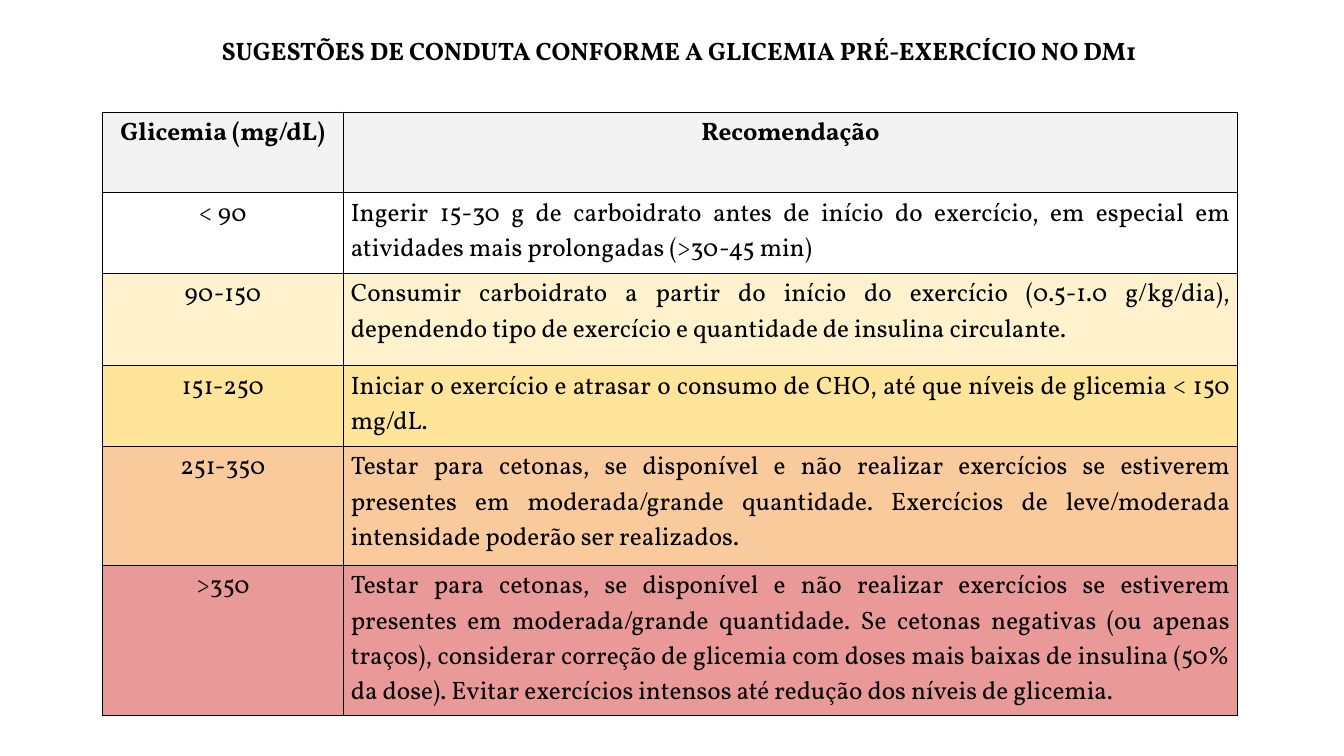
from lxml.etree import SubElement
from pptx import Presentation
from pptx.dml.color import RGBColor
from pptx.enum.text import MSO_ANCHOR, MSO_AUTO_SIZE, PP_ALIGN
from pptx.oxml.ns import qn
from pptx.util import Inches, Pt

BLACK = RGBColor(0x00, 0x00, 0x00)
GREY = RGBColor(0xF3, 0xF3, 0xF3)
WHITE = RGBColor(0xFF, 0xFF, 0xFF)
CREAM = RGBColor(0xFF, 0xF2, 0xCC)
YELLOW = RGBColor(0xFF, 0xE5, 0x99)
ORANGE = RGBColor(0xF9, 0xCB, 0x9C)
RED = RGBColor(0xEA, 0x99, 0x99)

FONT = {"name": "Vollkorn", "size": Pt(18), "bold": False}
BOLD = {**FONT, "bold": True}
CELL = {"margin_left": Inches(0.07), "margin_right": Inches(0.07),
        "margin_top": Inches(0.05), "margin_bottom": Inches(0.05),
        "vertical_anchor": MSO_ANCHOR.TOP}
FRAME = {"word_wrap": True, "auto_size": MSO_AUTO_SIZE.NONE,
         "vertical_anchor": MSO_ANCHOR.MIDDLE}

TITLE = "SUGESTÕES DE CONDUTA CONFORME A GLICEMIA PRÉ-EXERCÍCIO NO DM1"
KETONES = ("Testar para cetonas, se disponível e não realizar exercícios se "
           "estiverem presentes em moderada/grande quantidade. ")
COLS = [2.4, 8.86]
# Row height, fill, blood glucose range, advice
ROWS = [
    (0.8, GREY, "Glicemia (mg/dL)", "Recomendação"),
    (0.79, WHITE, "< 90",
     "Ingerir 15-30 g de carboidrato antes de início do exercício, em "
     "especial em atividades mais prolongadas (>30-45 min)"),
    (0.92, CREAM, "90-150",
     "Consumir carboidrato a partir do início do exercício (0.5-1.0 "
     "g/kg/dia), dependendo tipo de exercício e quantidade de insulina "
     "circulante."),
    (0.79, YELLOW, "151-250",
     "Iniciar o exercício e atrasar o consumo de CHO, até que níveis de "
     "glicemia < 150 mg/dL."),
    (1.18, ORANGE, "251-350",
     KETONES + "Exercícios de leve/moderada intensidade poderão ser "
     "realizados."),
    (1.49, RED, ">350",
     KETONES + "Se cetonas negativas (ou apenas traços), considerar correção "
     "de glicemia com doses mais baixas de insulina (50% da dose). Evitar "
     "exercícios intensos até redução dos níveis de glicemia."),
]


def apply(item, style):
    for key, value in style.items():
        setattr(item, key, value)


def write(frame, text, style, align):
    para = frame.paragraphs[0]
    para.text = text
    para.alignment = align
    font = para.runs[0].font
    apply(font, style)
    font.color.rgb = BLACK


def border(cell):
    props = cell._tc.get_or_add_tcPr()
    for side in ("a:lnL", "a:lnR", "a:lnT", "a:lnB"):
        line = SubElement(props, qn(side), w=str(Pt(0.5)))
        fill = SubElement(line, qn("a:solidFill"))
        SubElement(fill, qn("a:srgbClr"), val=str(BLACK))


def place(item, box):
    names = ("left", "top", "width", "height")
    apply(item, dict(zip(names, map(Inches, box))))


def heading(slide, box):
    title = slide.shapes.title
    place(title, box)
    apply(title.text_frame, FRAME)
    write(title.text_frame, TITLE, BOLD, PP_ALIGN.CENTER)


def advice(slide, left, top):
    """Add the table of glucose ranges and advice at the given corner."""
    size = sum(COLS), sum(row[0] for row in ROWS)
    table = slide.shapes.add_table(
        len(ROWS), len(COLS), *map(Inches, (left, top, *size))).table
    table.horz_banding = False
    for col, width in zip(table.columns, COLS):
        col.width = Inches(width)
    for r, (height, color, *texts) in enumerate(ROWS):
        table.rows[r].height = Inches(height)
        for c, text in enumerate(texts):
            cell = table.cell(r, c)
            apply(cell, CELL)
            border(cell)
            cell.fill.solid()
            cell.fill.fore_color.rgb = color
            prose = r > 0 and c == 1
            write(cell.text_frame, text, FONT if r else BOLD,
                  PP_ALIGN.JUSTIFY if prose else PP_ALIGN.CENTER)


def main():
    deck = Presentation()
    deck.slide_width, deck.slide_height = Inches(13.33), Inches(7.5)
    slide = deck.slides.add_slide(deck.slide_layouts[5])
    heading(slide, (1.45, 0.3, 10.57, 0.4))
    advice(slide, 1.01, 1.11)
    deck.save("out.pptx")


if __name__ == "__main__":
    main()
